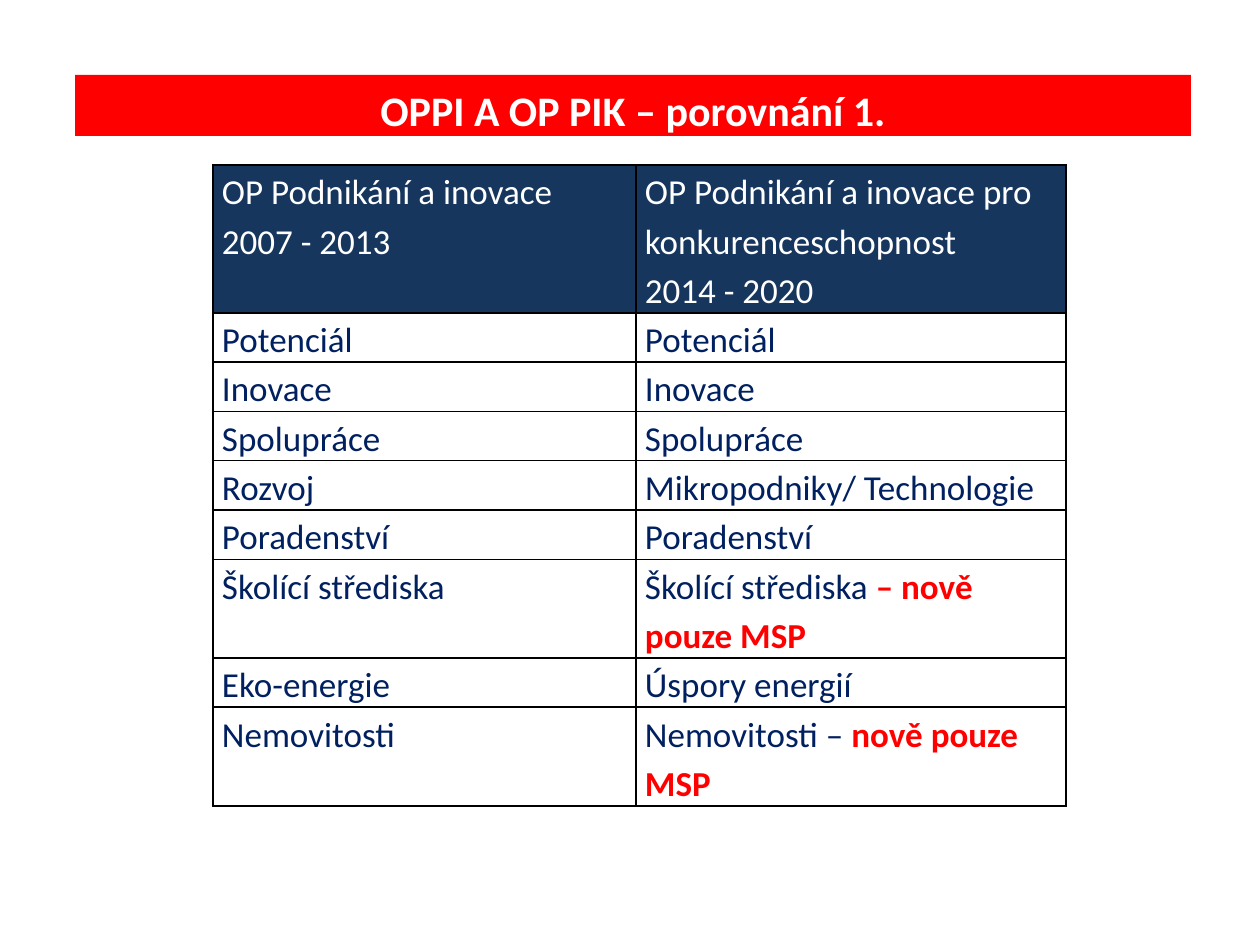
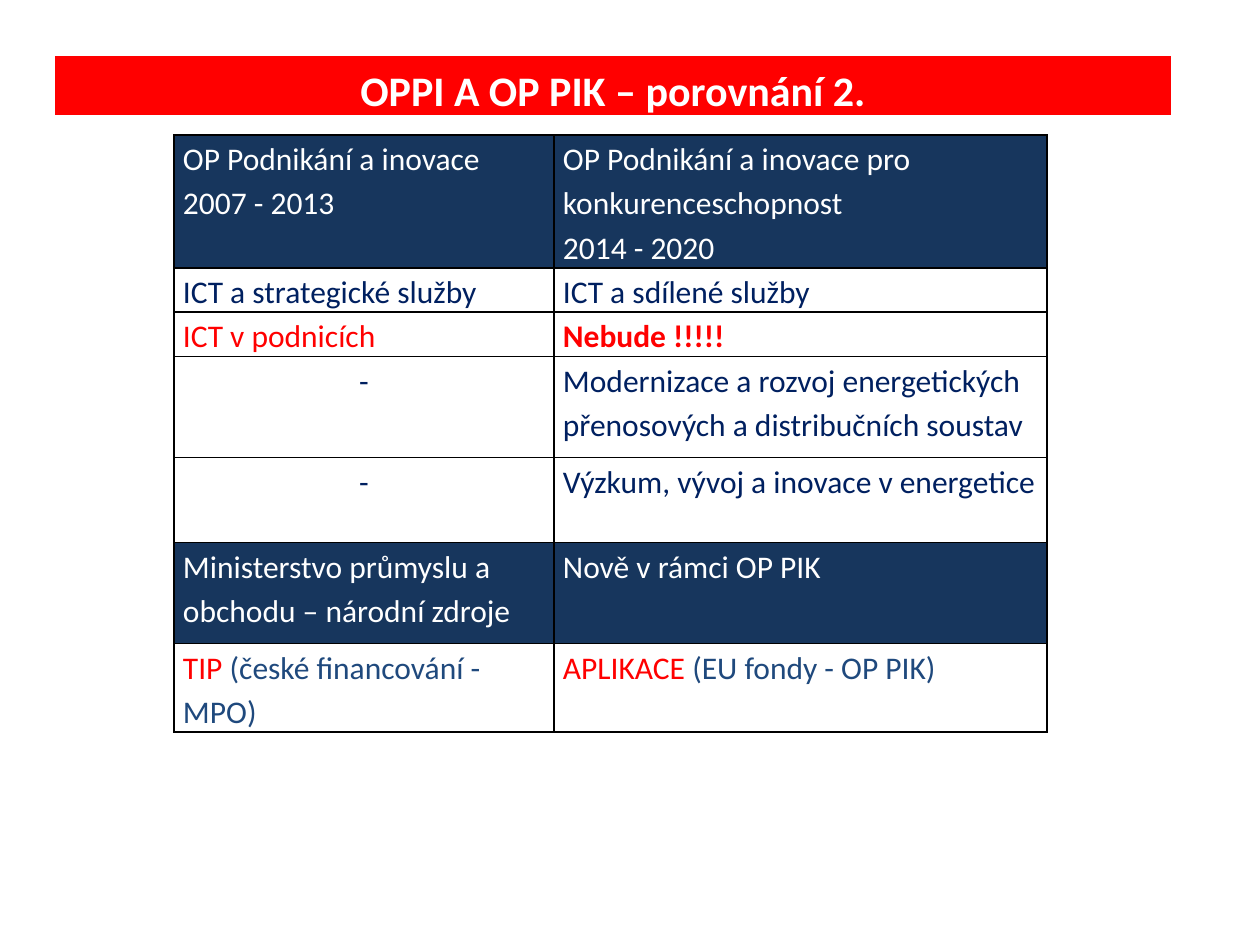
from lxml import etree
from pptx import Presentation
from pptx.dml.color import RGBColor
from pptx.enum.shapes import MSO_SHAPE
from pptx.enum.text import MSO_ANCHOR, PP_ALIGN
from pptx.oxml.ns import qn
from pptx.util import Pt

RECTANGLE = MSO_SHAPE.RECTANGLE
LEFT, CENTER = PP_ALIGN.LEFT, PP_ALIGN.CENTER
TOP, MIDDLE = MSO_ANCHOR.TOP, MSO_ANCHOR.MIDDLE

PX = 914400 / 126
FONT = "Calibri"
COLORS = {
    "red": "FF0000",
    "white": "FFFFFF",
    "black": "000000",
    "header": "17365D",
    "navy": "002060",
    "blue": "1F497D",
}
BAND_WIDTH = 1116
CELL_INSET = 9
BORDER_WIDTH = Pt(1)


def px(value):
    return round(value * PX)


def write_text(text_frame, runs, size=20, color="navy", bold=False, align=LEFT):
    """Write a string, or (text, color, bold) runs; a newline starts a paragraph."""
    if isinstance(runs, str):
        runs = [(runs, color, bold)]
    paragraph = text_frame.paragraphs[0]
    paragraphs = [paragraph]
    for text, run_color, run_bold in runs:
        for index, line in enumerate(text.split("\n")):
            if index:
                paragraph = text_frame.add_paragraph()
                paragraphs.append(paragraph)
            run = paragraph.add_run()
            run.text = line
            run.font.name = FONT
            run.font.size = Pt(size)
            run.font.bold = run_bold
            run.font.color.rgb = RGBColor.from_string(COLORS[run_color])
    for paragraph in paragraphs:
        paragraph.alignment = align
        paragraph.line_spacing = 1.15


HEADER = (
    "OP Podnikání a inovace\n2007 - 2013",
    "OP Podnikání a inovace pro konkurenceschopnost\n2014 - 2020",
)

# Each row: height, kind, left cell, right cell
SLIDES = [
    {
        "title": "OPPI A OP PIK – porovnání 1.",
        "band": (75, 75, 61),
        "table": (213, 165),
        "columns": (423, 430),
        "size": 20,
        "rows": [
            (147, "header", *HEADER),
            (49, "body", "Potenciál", "Potenciál"),
            (49, "body", "Inovace", "Inovace"),
            (49, "body", "Spolupráce", "Spolupráce"),
            (49, "body", "Rozvoj", "Mikropodniky/ Technologie"),
            (49, "body", "Poradenství", "Poradenství"),
            (98, "body", "Školící střediska",
             [("Školící střediska ", "navy", False), ("– nově pouze MSP", "red", True)]),
            (49, "body", "Eko-energie", "Úspory energií"),
            (98, "body", "Nemovitosti",
             [("Nemovitosti – ", "navy", False), ("nově pouze MSP", "red", True)]),
        ],
    },
    {
        "title": "OPPI A OP PIK – porovnání 2.",
        "band": (55, 56, 59),
        "table": (174, 135),
        "columns": (380, 493),
        "size": 18,
        "rows": [
            (133, "header", *HEADER),
            (44, "body", "ICT a strategické služby", "ICT a sdílené služby"),
            (44, "body", [("ICT v podnicích", "red", False)],
             [("Nebude !!!!!", "red", True)]),
            (101, "body", "-",
             "Modernizace a rozvoj energetických přenosových a distribučních soustav"),
            (85, "body", "-", "Výzkum, vývoj a inovace v energetice"),
            (101, "header", "Ministerstvo průmyslu a obchodu – národní zdroje",
             "Nově v rámci OP PIK"),
            (88, "body",
             [("TIP ", "red", False), ("(české financování - MPO)", "blue", False)],
             [("APLIKACE ", "red", False), ("(EU fondy - OP PIK)", "blue", False)]),
        ],
    },
]

presentation = Presentation()
presentation.slide_width = px(1260)
presentation.slide_height = px(945)

for content in SLIDES:
    slide = presentation.slides.add_slide(presentation.slide_layouts[6])

    # Title band
    left, top, height = content["band"]
    band = slide.shapes.add_shape(RECTANGLE, px(left), px(top), px(BAND_WIDTH), px(height))
    band.shadow.inherit = False
    band.fill.solid()
    band.fill.fore_color.rgb = RGBColor.from_string(COLORS["red"])
    band.line.fill.background()
    band.text_frame.word_wrap = True
    band.text_frame.margin_top = band.text_frame.margin_bottom = 0
    band.text_frame.vertical_anchor = MIDDLE
    write_text(band.text_frame, content["title"], size=24, color="white", bold=True, align=CENTER)

    # Comparison table
    left, top = content["table"]
    rows, columns = content["rows"], content["columns"]
    table = slide.shapes.add_table(
        len(rows), len(columns), px(left), px(top),
        px(sum(columns)), px(sum(row[0] for row in rows)),
    ).table
    table.first_row = table.horz_banding = False
    for column, width in zip(table.columns, columns):
        column.width = px(width)

    for row_index, (height, kind, *texts) in enumerate(rows):
        table.rows[row_index].height = px(height)
        is_header = kind == "header"
        for column_index, text in enumerate(texts):
            cell = table.cell(row_index, column_index)
            cell.margin_left = cell.margin_right = px(CELL_INSET)
            cell.margin_top = cell.margin_bottom = 0
            cell.vertical_anchor = TOP
            write_text(
                cell.text_frame, text, size=content["size"],
                color="white" if is_header else "navy",
                align=CENTER if text == "-" else LEFT,
            )

            # Borders come before the fill in the cell properties
            properties = cell._tc.get_or_add_tcPr()
            for side in ("a:lnL", "a:lnR", "a:lnT", "a:lnB"):
                border = etree.SubElement(properties, qn(side), w=str(BORDER_WIDTH))
                fill = etree.SubElement(border, qn("a:solidFill"))
                etree.SubElement(fill, qn("a:srgbClr"), val=COLORS["black"])
            cell.fill.solid()
            cell.fill.fore_color.rgb = RGBColor.from_string(
                COLORS["header" if is_header else "white"])

presentation.save("out.pptx")
